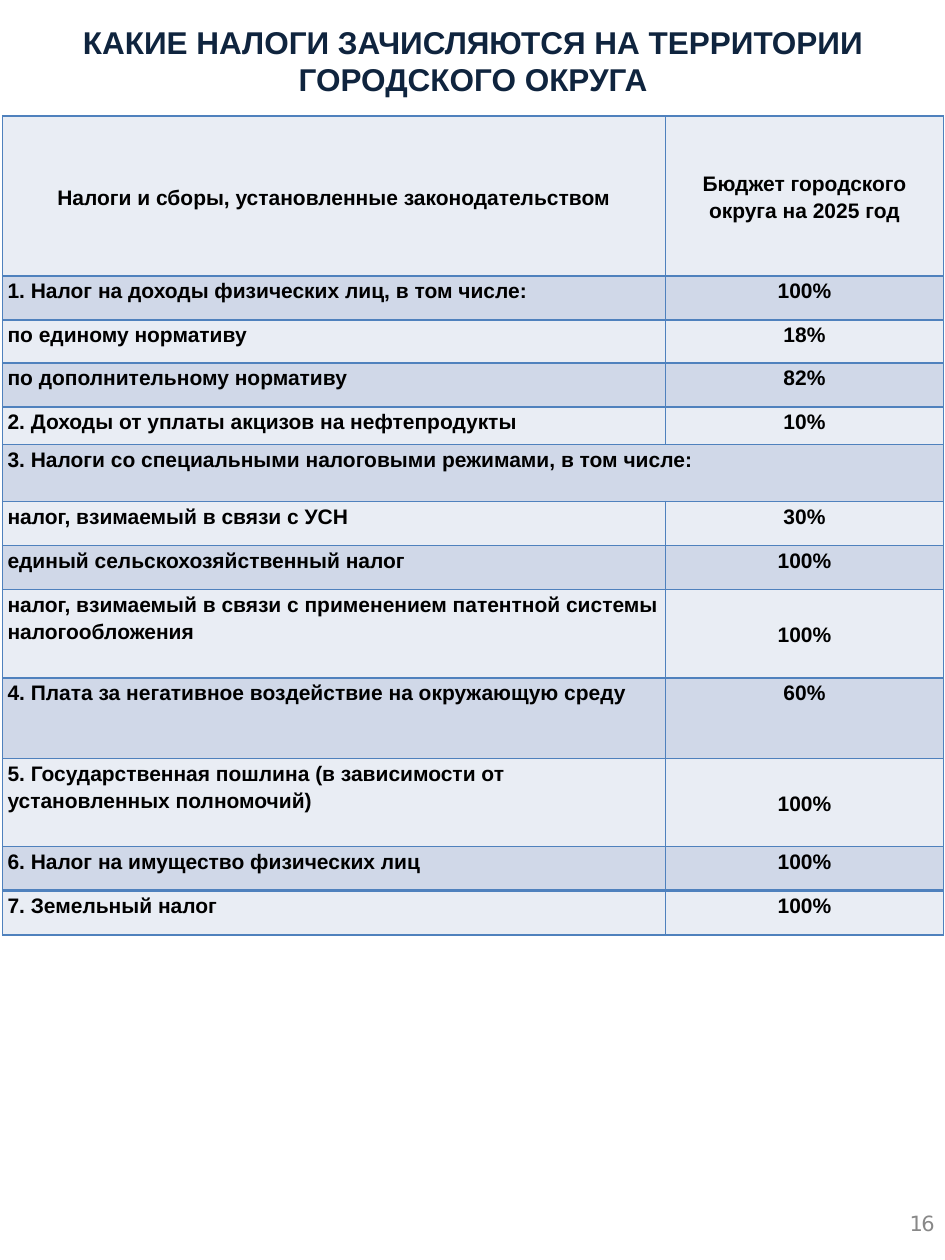
from dataclasses import dataclass

from lxml import etree
from pptx import Presentation
from pptx import util as u
from pptx.dml.color import RGBColor
from pptx.enum import text
from pptx.oxml.ns import qn

GRID_COLUMNS, GRID_ROWS = 75, 100  # one grid step is a tenth of an inch


@dataclass(frozen=True)
class Theme:
    font: str = "Arial"
    number_font: str = "DejaVu Sans"
    title_size: float = 18
    body_size: float = 12
    title_color: str = "0F243E"
    ink: str = "000000"
    muted: str = "888888"
    border: str = "4F81BD"
    bands: tuple = ("E9EDF4", "D0D8E8")


def write(frame, content, *, font, size, color, bold=False,
          align=text.PP_ALIGN.LEFT, line_spacing=1.0, before=0.0,
          insets=(0, 0, 0, 0), tracking=None):
    """Fill a text frame or table cell; each line of content is a paragraph."""
    frame.margin_left, frame.margin_top, frame.margin_right, frame.margin_bottom = (
        u.Inches(inset) for inset in insets)
    body = getattr(frame, "text_frame", frame)
    body.word_wrap = True
    for index, line in enumerate(content.split("\n")):
        paragraph = body.add_paragraph() if index else body.paragraphs[0]
        paragraph.alignment = align
        paragraph.line_spacing = line_spacing
        paragraph.space_before = u.Pt(before)
        run = paragraph.add_run()
        run.text = line
        run.font.name, run.font.size, run.font.bold = font, u.Pt(size), bold
        run.font.color.rgb = RGBColor.from_string(color)
        if tracking is not None:
            run.font._element.set("spc", str(round(tracking * 100)))


class Page:
    def __init__(self, deck, theme):
        self.theme = theme
        self.column = deck.slide_width / GRID_COLUMNS
        self.row = deck.slide_height / GRID_ROWS
        self.slide = deck.slides.add_slide(deck.slide_layouts[5])

    def area(self, left, top, width, height):
        return (round(left * self.column), round(top * self.row),
                round(width * self.column), round(height * self.row))

    def title(self, content, *place):
        heading = self.slide.shapes.title
        heading.left, heading.top, heading.width, heading.height = self.area(*place)
        frame = heading.text_frame
        write(frame, content, font=self.theme.font, size=self.theme.title_size,
              color=self.theme.title_color, bold=True, before=1,
              align=text.PP_ALIGN.CENTER, insets=(0, 0.01, 0, 0))
        frame.vertical_anchor = text.MSO_ANCHOR.TOP
        frame.auto_size = text.MSO_AUTO_SIZE.NONE

    def page_number(self, content, *place):
        frame = self.slide.shapes.add_textbox(*self.area(*place)).text_frame
        write(frame, content, font=self.theme.number_font,
              size=self.theme.body_size, color=self.theme.muted,
              before=1.6, insets=(0.06, 0, 0, 0), tracking=-1)

    def borders(self, cell, top=1, bottom=1):
        properties = cell._tc.get_or_add_tcPr()
        for side, width in (("L", 1), ("R", 1), ("T", top), ("B", bottom)):
            line = etree.SubElement(properties, qn(f"a:ln{side}"), w=str(u.Pt(width)))
            fill = etree.SubElement(line, qn("a:solidFill"))
            etree.SubElement(fill, qn("a:srgbClr"), val=self.theme.border)

    def tax_table(self, rows, left, top, widths):
        """Draw rows of (height, tax, share); a share of None joins the row."""
        place = self.area(left, top, sum(widths), sum(row[0] for row in rows))
        table = self.slide.shapes.add_table(len(rows), len(widths), *place).table
        for column, width in zip(table.columns, widths):
            column.width = round(width * self.column)
        last = len(rows) - 1
        for index, (height, tax, share) in enumerate(rows):
            table.rows[index].height = round(height * self.row)
            tax_cell, share_cell = table.cell(index, 0), table.cell(index, 1)
            if share is None:
                tax_cell.merge(share_cell)
            for cell, content in ((tax_cell, tax), (share_cell, share)):
                self.borders(cell, top=2 if index == last else 1,
                             bottom=2 if index == last - 1 else 1)
                cell.fill.solid()
                cell.fill.fore_color.rgb = RGBColor.from_string(
                    self.theme.bands[index % 2])
                if content is None:
                    continue
                centered = index == 0 or cell is share_cell
                write(cell, content, font=self.theme.font,
                      size=self.theme.body_size, color=self.theme.ink,
                      bold=True, line_spacing=1.15, insets=(0.04, 0, 0.04, 0),
                      align=text.PP_ALIGN.CENTER if centered else text.PP_ALIGN.LEFT)
                middle = index == 0 or (cell is share_cell and height == TWO_LINES)
                cell.vertical_anchor = (
                    text.MSO_ANCHOR.MIDDLE if middle else text.MSO_ANCHOR.TOP)


ONE_LINE, TWO_LINES = 3.5, 7
TAXES = [
    (12.7, "Налоги и сборы, установленные законодательством",
     "Бюджет городского округа на 2025 год"),
    (ONE_LINE, "1. Налог на доходы физических лиц, в том числе:", "100%"),
    (3.4, "по единому нормативу", "18%"),
    (ONE_LINE, "по дополнительному нормативу", "82%"),
    (3, "2. Доходы от уплаты акцизов на нефтепродукты", "10%"),
    (4.5, "3. Налоги со специальными налоговыми режимами, в том числе:", None),
    (ONE_LINE, "налог, взимаемый в связи с УСН", "30%"),
    (ONE_LINE, "единый сельскохозяйственный налог", "100%"),
    (TWO_LINES, "налог, взимаемый в связи с применением патентной системы "
     "налогообложения", "100%"),
    (6.4, "4. Плата за негативное воздействие на окружающую среду", "60%"),
    (TWO_LINES, "5. Государственная пошлина (в зависимости от\n"
     "установленных полномочий)", "100%"),
    (ONE_LINE, "6. Налог на имущество физических лиц", "100%"),
    (ONE_LINE, "7. Земельный налог", "100%"),
]


def main():
    deck = Presentation()
    deck.slide_width, deck.slide_height = u.Inches(7.5), u.Inches(10)
    page = Page(deck, Theme())
    page.title("КАКИЕ НАЛОГИ ЗАЧИСЛЯЮТСЯ НА ТЕРРИТОРИИ ГОРОДСКОГО ОКРУГА",
               2.8, 1.7, 69.5, 7)
    page.tax_table(TAXES, left=0.2, top=9.2, widths=(52.6, 22.1))
    page.page_number("16", 71.6, 96.1, 3.1, 2.5)
    deck.save("out.pptx")


if __name__ == "__main__":
    main()
